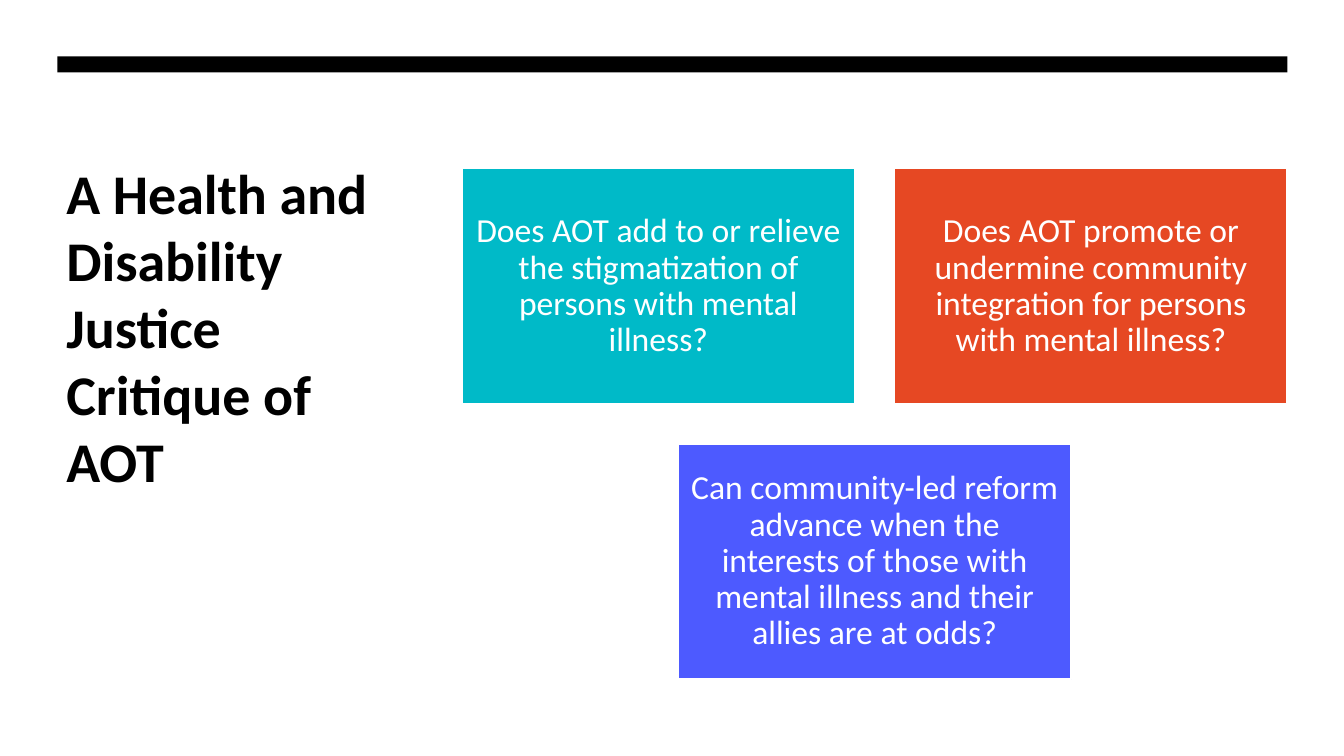
from pptx import Presentation
from pptx.dml.color import RGBColor
from pptx.enum.shapes import MSO_SHAPE as Shape
from pptx.enum.text import MSO_ANCHOR as Anchor, PP_ALIGN as Align
from pptx.util import Inches, Pt

# Content
TITLE = "A Health and Disability Justice Critique of AOT"
QUESTIONS = [
    ("Does AOT add to or relieve the stigmatization of persons with mental illness?", "00BAC8"),
    ("Does AOT promote or undermine community integration for persons with mental illness?", "E64823"),
    ("Can community-led reform advance when the interests of those with mental illness "
     "and their allies are at odds?", "4D5AFF"),
]

# Layout and formats, lengths in inches
SLIDE_W, SLIDE_H = 13.33, 7.5
CARD_W, CARD_H, GAP = 3.9, 2.34, 0.39
GRID_LEFT, GRID_TOP, COLUMNS = 4.58, 1.67, 2
TITLE_FONT = {"name": "Calibri", "size": Pt(40), "bold": True}
CARD_FONT = {"name": "Calibri", "size": Pt(24)}
TITLE_PARA = {"alignment": Align.LEFT}
CARD_PARA = {"alignment": Align.CENTER, "line_spacing": 0.9}
CARD_FRAME = {"vertical_anchor": Anchor.MIDDLE}
CARD_FRAME.update({f"margin_{side}": Inches(0.1) for side in ("left", "top", "right", "bottom")})


def color(target, value):
    target.rgb = RGBColor.from_string(value)


def apply(target, values):
    for name, value in values.items():
        setattr(target, name, value)


def add_block(page, place, fill, line=None):
    block = page.shapes.add_shape(Shape.RECTANGLE, *map(Inches, place))
    block.shadow.inherit = False
    block.fill.solid()
    color(block.fill.fore_color, fill)
    if line:
        block.line.width = Pt(1.5)
        color(block.line.color, line)
    else:
        block.line.fill.background()
    return block


def write(box, text, frame, layout, font, ink):
    box.text_frame.word_wrap = True
    apply(box.text_frame, frame)
    para = box.text_frame.paragraphs[0]
    apply(para, layout)
    span = para.add_run()
    span.text = text
    apply(span.font, font)
    color(span.font.color, ink)


deck = Presentation()
deck.slide_width, deck.slide_height = Inches(SLIDE_W), Inches(SLIDE_H)
page = deck.slides.add_slide(deck.slide_layouts[6])

# Background, title and top bar
add_block(page, (0, 0, SLIDE_W, SLIDE_H), "FFFFFF")
heading = page.shapes.add_textbox(*map(Inches, (0.56, 1.52, 3.45, 4.45)))
write(heading, TITLE, {"vertical_anchor": Anchor.TOP}, TITLE_PARA, TITLE_FONT, "000000")
add_block(page, (0.57, 0.56, 12.2, 0.16), "000000")

# Question cards, each row centred on the grid
for index, (question, fill) in enumerate(QUESTIONS):
    row, column = divmod(index, COLUMNS)
    in_row = min(COLUMNS, len(QUESTIONS) - row * COLUMNS)
    indent = (COLUMNS - in_row) * (CARD_W + GAP) / 2
    left = GRID_LEFT + indent + column * (CARD_W + GAP)
    top = GRID_TOP + row * (CARD_H + GAP)
    card = add_block(page, (left, top, CARD_W, CARD_H), fill, "FFFFFF")
    write(card, question, CARD_FRAME, CARD_PARA, CARD_FONT, "FFFFFF")

deck.save("out.pptx")
